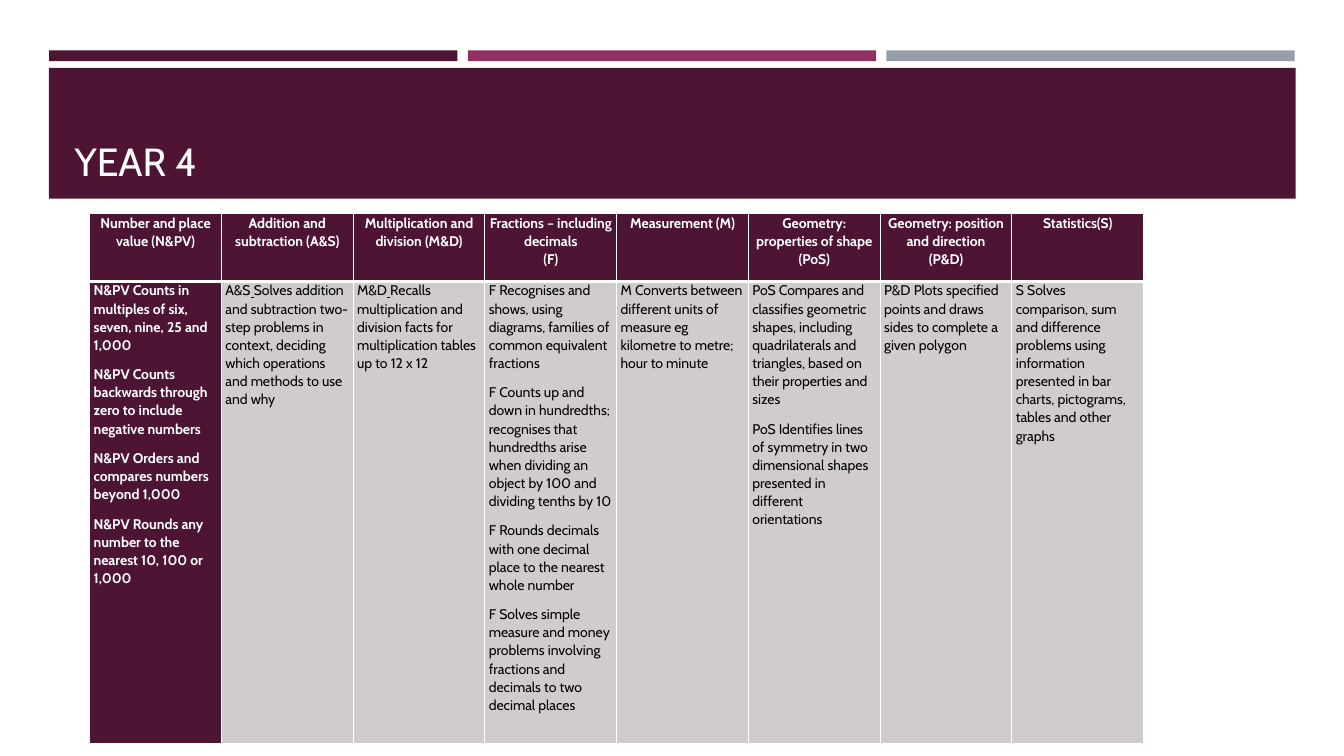
from dataclasses import dataclass

from lxml.etree import SubElement
from pptx import Presentation
from pptx.dml.color import RGBColor
from pptx.enum.shapes import MSO_SHAPE
from pptx.enum.text import MSO_ANCHOR, PP_ALIGN
from pptx.oxml.ns import qn
from pptx.util import Cm, Pt


@dataclass(frozen=True)
class Theme:
    font: str = "Cabin"
    plum: str = "4D1434"
    magenta: str = "903163"
    slate: str = "969FA7"
    pale: str = "D0CCCE"
    white: str = "FFFFFF"
    black: str = "000000"
    title_size: int = 28
    table_size: int = 10
    thin: int = 1
    thick: int = 3


STRANDS = [
    ("Number and place value (N&PV)", [
        "N&PV Counts in multiples of six, seven, nine, 25 and 1,000",
        "N&PV Counts backwards through zero to include negative numbers",
        "N&PV Orders and compares numbers beyond 1,000",
        "N&PV Rounds any number to the nearest 10, 100 or 1,000",
    ]),
    ("Addition and subtraction (A&S)", [
        "A&S| |Solves addition and subtraction two-step problems in context, "
        "deciding which operations and methods to use and why",
    ]),
    ("Multiplication and division (M&D)", [
        "M&D| |Recalls multiplication and division facts for multiplication "
        "tables up to 12 x 12",
    ]),
    ("Fractions – including decimals\n(F)", [
        "F Recognises and shows, using diagrams, families of common equivalent fractions",
        "F Counts up and down in hundredths; recognises that hundredths arise when "
        "dividing an object by 100 and dividing tenths by 10",
        "F Rounds decimals with one decimal place to the nearest whole number",
        "F Solves simple measure and money problems involving fractions and decimals "
        "to two decimal places",
    ]),
    ("Measurement (M)", [
        "M Converts between different units of measure eg kilometre to metre; "
        "hour to minute",
    ]),
    ("Geometry: properties of shape\n(PoS)", [
        "PoS Compares and classifies geometric shapes, including quadrilaterals and "
        "triangles, based on their properties and sizes",
        "PoS Identifies lines of symmetry in two dimensional shapes presented in "
        "different orientations",
    ]),
    ("Geometry: position and direction\n(P&D)", [
        "P&D Plots specified points and draws sides to complete a given polygon",
    ]),
    ("Statistics(S)", [
        "S Solves comparison, sum and difference problems using information presented "
        "in bar charts, pictograms, tables and other graphs",
    ]),
]


class YearSlide:
    def __init__(self, slide, theme):
        self.slide = slide
        self.theme = theme

    def block(self, left, top, width, height, color):
        block = self.slide.shapes.add_shape(
            MSO_SHAPE.RECTANGLE, Cm(left), Cm(top), Cm(width), Cm(height))
        block.shadow.inherit = False
        block.fill.solid()
        block.fill.fore_color.rgb = RGBColor.from_string(color)
        block.line.fill.background()

    def style(self, run, size, color, bold=False):
        run.font.name = self.theme.font
        run.font.size = Pt(size)
        run.font.bold = bold
        run.font.color.rgb = RGBColor.from_string(color)

    def title(self, text, left, top, width, height):
        frame = self.slide.shapes.add_textbox(
            Cm(left), Cm(top), Cm(width), Cm(height)).text_frame
        frame.word_wrap = True
        frame.vertical_anchor = MSO_ANCHOR.BOTTOM
        frame.text = text
        paragraph = frame.paragraphs[0]
        paragraph.line_spacing = 0.9
        self.style(paragraph.runs[0], self.theme.title_size, self.theme.white)

    def borders(self, cell, top, bottom):
        properties = cell._tc.get_or_add_tcPr()
        thin = self.theme.thin
        for side, width in (("L", thin), ("R", thin), ("T", top), ("B", bottom)):
            line = SubElement(properties, qn(f"a:ln{side}"), w=str(Pt(width)))
            fill = SubElement(line, qn("a:solidFill"))
            SubElement(fill, qn("a:srgbClr"), val=self.theme.white)

    def cell(self, cell, text, dark, heading):
        theme = self.theme
        if heading:
            self.borders(cell, theme.thin, theme.thick)
        else:
            self.borders(cell, theme.thick, theme.thin)
        cell.fill.solid()
        cell.fill.fore_color.rgb = RGBColor.from_string(theme.plum if dark else theme.pale)
        cell.margin_left = cell.margin_right = Cm(0.1)
        cell.margin_top = cell.margin_bottom = 0
        cell.text_frame.text = text
        for paragraph in cell.text_frame.paragraphs:
            label, *rest = paragraph.text.split("|")
            paragraph.text = label
            for part in rest:
                run = paragraph.add_run()
                run.text = part
                run.font.underline = part == " "
            paragraph.line_spacing = 1.07
            paragraph.space_after = Pt(0 if heading else 8)
            paragraph.alignment = PP_ALIGN.CENTER if heading else PP_ALIGN.LEFT
            for run in paragraph.runs:
                self.style(run, theme.table_size,
                           theme.white if dark else theme.black, dark)

    def table(self, strands, left, top, column_width, row_heights):
        table = self.slide.shapes.add_table(
            2, len(strands), Cm(left), Cm(top),
            Cm(column_width * len(strands)), Cm(sum(row_heights))).table
        table.horz_banding = False
        for row, height in zip(table.rows, row_heights):
            row.height = Cm(height)
        for index, (heading, objectives) in enumerate(strands):
            table.columns[index].width = Cm(column_width)
            self.cell(table.cell(0, index), heading, True, True)
            self.cell(table.cell(1, index), "\n".join(objectives), index == 0, False)


def main():
    presentation = Presentation()
    presentation.slide_width = Cm(33.87)
    presentation.slide_height = Cm(19.05)
    theme = Theme()
    year = YearSlide(
        presentation.slides.add_slide(presentation.slide_layouts[6]), theme)
    for index, color in enumerate((theme.plum, theme.magenta, theme.slate)):
        year.block(1.24 + 10.55 * index, 1.27, 10.29, 0.27, color)
    year.block(1.23, 1.71, 31.42, 3.3, theme.plum)
    year.title("YEAR 4", 1.63, 1.96, 30.63, 2.82)
    year.table(STRANDS, 2.26, 5.38, 3.32, (1.71, 11.65))
    presentation.save("out.pptx")


if __name__ == "__main__":
    main()
